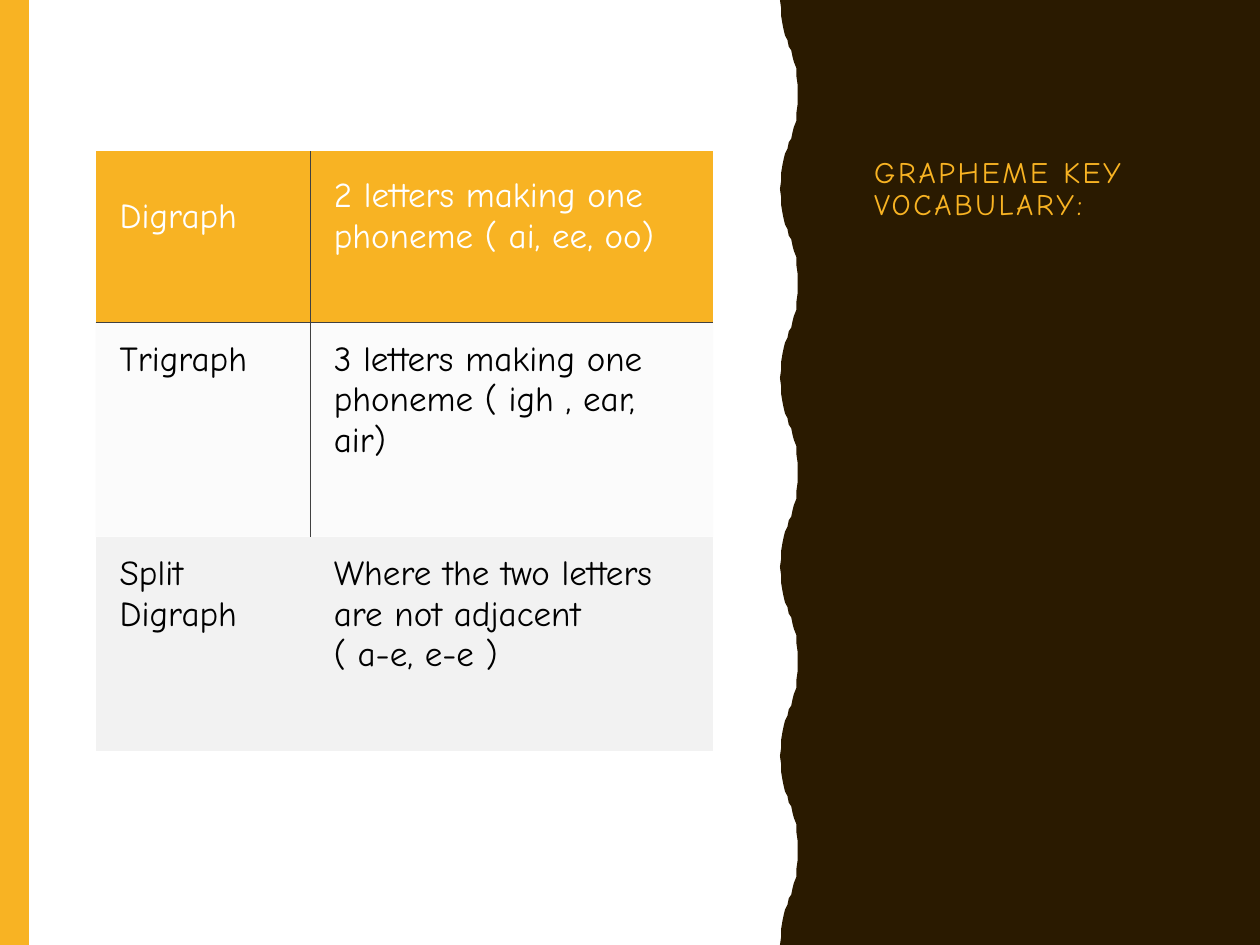
from pptx import Presentation
from pptx import util as u
from pptx.dml.color import RGBColor
from pptx.enum import shapes, text
from pptx.oxml.ns import qn
from lxml import etree

COLOURS = {"gold": "F8B323", "brown": "2A1A00", "white": "FFFFFF",
           "black": "000000", "grey": "F2F2F2", "rule": "404040"}
FONT = "Comic Neue"

# Half a wave as (offset right, offset down); the other half mirrors it
WAVE_LENGTH = 1.5
HALF_WAVE = [(0, 0), (0.01, 0.07), (0.01, 0.13), (0.02, 0.19), (0.03, 0.24),
             (0.04, 0.28), (0.06, 0.32), (0.07, 0.37), (0.09, 0.4),
             (0.1, 0.45), (0.11, 0.49), (0.13, 0.54), (0.13, 0.6),
             (0.14, 0.67), (0.14, 0.75)]

LINE_HEIGHT = 0.32
ROWS = [
    {"height": 1.36, "fill": "gold", "ink": "white", "rules": "B",
     "anchor": text.MSO_ANCHOR.MIDDLE, "bottom": 0.14 + LINE_HEIGHT,
     "cells": [["Digraph"], ["2 letters making one", "phoneme ( ai, ee, oo)"]]},
    {"height": 1.7, "fill": "grey", "alpha": 30, "ink": "black", "rules": "T",
     "anchor": text.MSO_ANCHOR.TOP, "bottom": 0.14,
     "cells": [["Trigraph"], ["3 letters making one", "phoneme ( igh , ear, air)"]]},
    {"height": 1.7, "fill": "grey", "ink": "black", "rules": None,
     "anchor": text.MSO_ANCHOR.TOP, "bottom": 0.14,
     "cells": [["Split Digraph"],
               ["Where the two letters", "are not adjacent", "( a-e, e-e )"]]},
]


def rgb(name):
    return RGBColor.from_string(COLOURS[name])


def set_all(target, values):
    for name, value in values.items():
        setattr(target, name, value)


def add_span(para, words, size, colour):
    span = para.add_run()
    span.text = words
    set_all(span.font, {"name": FONT, "size": u.Pt(size), "bold": False})
    span.font.color.rgb = rgb(colour)
    return span


def paint(shape, colour):
    shape.shadow.inherit = False
    shape.fill.solid()
    shape.fill.fore_color.rgb = rgb(colour)
    shape.line.fill.background()


def add_side_bar(page, left, top, width, height):
    bar = page.shapes.add_shape(shapes.MSO_SHAPE.RECTANGLE, u.Inches(left),
                                u.Inches(top), u.Inches(width), u.Inches(height))
    paint(bar, "gold")


def add_wavy_panel(page, left, top, width, height):
    wave = HALF_WAVE + [(x, WAVE_LENGTH - y) for x, y in HALF_WAVE[-2::-1]]
    edge = [(left + x, top + number * WAVE_LENGTH + y)
            for number in range(round(height / WAVE_LENGTH)) for x, y in wave]
    right = left + width
    outline = edge + [(right, top + height), (right, top)]
    points = [(u.Inches(x), u.Inches(y)) for x, y in outline]
    builder = page.shapes.build_freeform(*points[0])
    builder.add_line_segments(points[1:], close=True)
    paint(builder.convert_to_shape(), "brown")


def add_title(page, left, top, width, height):
    box = page.shapes.add_textbox(u.Inches(left), u.Inches(top),
                                  u.Inches(width), u.Inches(height))
    set_all(box.text_frame, {"word_wrap": True,
                             "vertical_anchor": text.MSO_ANCHOR.BOTTOM})
    para = box.text_frame.paragraphs[0]
    para.line_spacing = 0.9
    span = add_span(para, "GRAPHEME KEY VOCABULARY:", 17, "gold")
    span.font._element.set("spc", "150")


def set_borders(cell, ruled_sides):
    """Rule the given sides and clear the others."""
    props = cell._tc.get_or_add_tcPr()
    for side in "LRTB":
        line = etree.SubElement(props, qn("a:ln" + side), w=str(u.Pt(0.5)))
        if side in ruled_sides:
            solid = etree.SubElement(line, qn("a:solidFill"))
            etree.SubElement(solid, qn("a:srgbClr"), val=COLOURS["rule"])
        else:
            etree.SubElement(line, qn("a:noFill"))


def fill_cell(cell, lines, row, inner_side):
    set_borders(cell, row["rules"] + inner_side if row["rules"] else "")
    cell.fill.solid()
    cell.fill.fore_color.rgb = rgb(row["fill"])
    if "alpha" in row:
        colour = cell._tc.tcPr.find(qn("a:solidFill")).find(qn("a:srgbClr"))
        etree.SubElement(colour, qn("a:alpha"), val=str(row["alpha"] * 1000))
    set_all(cell, {"margin_left": u.Inches(0.19), "margin_right": u.Inches(0.17),
                   "margin_top": u.Inches(0.14),
                   "margin_bottom": u.Inches(row["bottom"]),
                   "vertical_anchor": row["anchor"]})
    frame = cell.text_frame
    for number, words in enumerate(lines):
        para = frame.add_paragraph() if number else frame.paragraphs[0]
        add_span(para, words, 20, row["ink"])


def add_vocabulary_table(page, left, top, widths):
    height = sum(row["height"] for row in ROWS)
    table = page.shapes.add_table(
        len(ROWS), len(widths), u.Inches(left), u.Inches(top),
        u.Inches(sum(widths)), u.Inches(height)).table
    set_all(table, {"first_row": False, "horz_banding": False})
    for column, width in zip(table.columns, widths):
        column.width = u.Inches(width)
    for row_number, row in enumerate(ROWS):
        table.rows[row_number].height = u.Inches(row["height"])
        for column_number, lines in enumerate(row["cells"]):
            fill_cell(table.cell(row_number, column_number), lines, row,
                      "RL"[column_number])


def main():
    deck = Presentation()
    set_all(deck, {"slide_width": u.Inches(10), "slide_height": u.Inches(7.5)})
    page = deck.slides.add_slide(deck.slide_layouts[6])
    page.background.fill.solid()
    page.background.fill.fore_color.rgb = rgb("white")
    add_side_bar(page, 0, 0, 0.23, 7.5)
    add_wavy_panel(page, 6.19, 0, 3.81, 7.5)
    add_title(page, 6.84, 0.5, 2.54, 1.31)
    add_vocabulary_table(page, 0.76, 1.2, [1.7, 3.2])
    deck.save("out.pptx")


if __name__ == "__main__":
    main()
